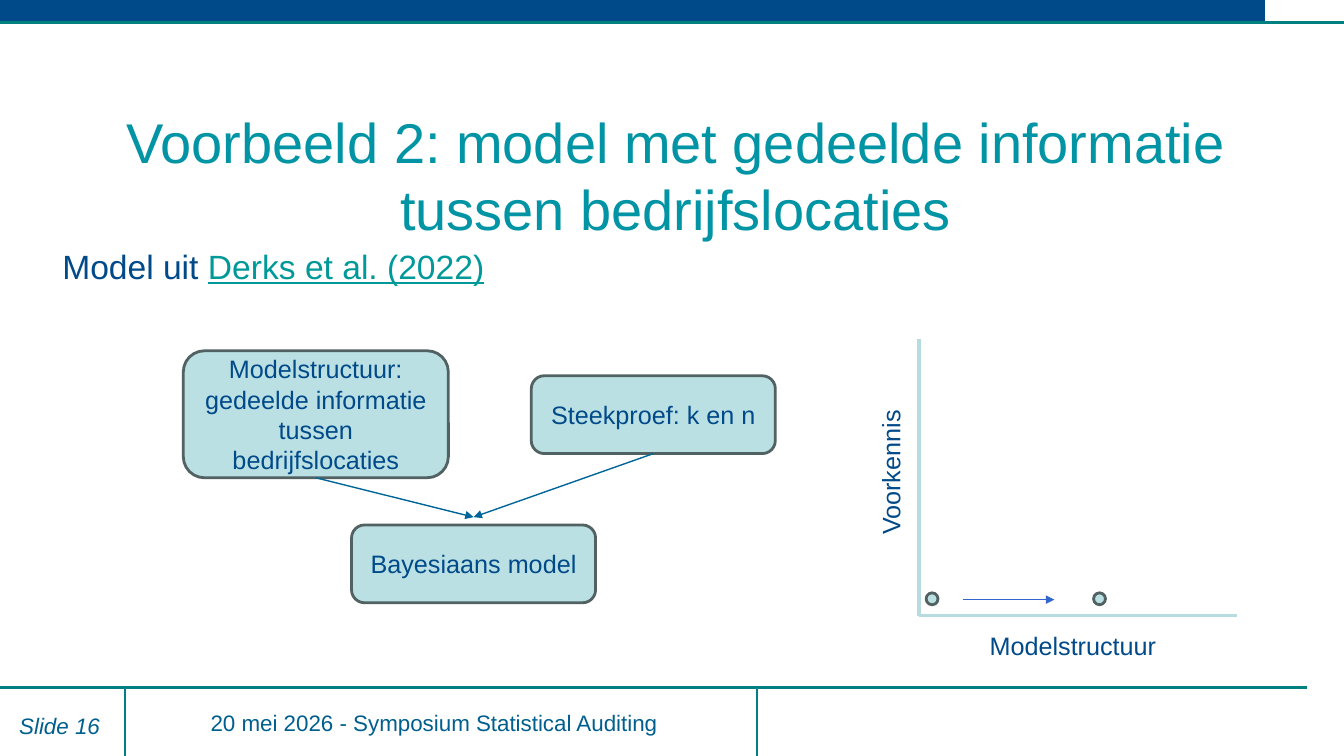
import pptx
import pptx.util
import pptx.dml.color
import pptx.enum.shapes
import pptx.enum.text
import pptx.oxml
import pptx.oxml.ns

Cm, Pt = pptx.util.Cm, pptx.util.Pt
SHAPE = pptx.enum.shapes.MSO_SHAPE
ALIGN = pptx.enum.text.PP_ALIGN
ANCHOR = pptx.enum.text.MSO_ANCHOR

COLOURS = {
    "navy": "004A8A", "title": "0094A4", "footer": "005F8E", "rule": "008080",
    "link": "009999", "node": "BBE0E3", "outline": "526263", "axis": "B6DCDF",
    "flow": "006699", "shift": "3366CC",
}

# All lengths in centimetres; areas are (left, top, width, height).
SLIDE_WIDTH, SLIDE_HEIGHT = 33.87, 19.05
FOOTER_TOP, HEADER_RULE = 17.32, 0.56
HEADER_BAR = (0, 0, 31.88, 0.58)
RULES = [
    ((0, FOOTER_TOP), (32.94, FOOTER_TOP)),
    ((3.15, FOOTER_TOP), (3.15, SLIDE_HEIGHT)),
    ((19.08, FOOTER_TOP), (19.08, SLIDE_HEIGHT)),
    ((0, HEADER_RULE), (SLIDE_WIDTH, HEADER_RULE)),
]

TEXTS = [
    ([("Voorbeeld 2: model met gedeelde informatie tussen bedrijfslocaties", "title")],
     (1.02, 3.12, 32, 2.57),
     dict(size=40, align=ALIGN.CENTER, anchor=ANCHOR.MIDDLE)),
    ([("Model uit ", "navy"), ("Derks et al. (2022)", "link")],
     (1.32, 6.07, 20.57, 1.2), dict(size=24)),
    ([("20 mei 2026 - Symposium Statistical Auditing", "footer")],
     (2.71, 17.75, 16.46, 0.91), dict(size=16, align=ALIGN.CENTER)),
    ([("Slide 16", "footer")],
     (0, 17.81, 2.77, 0.86), dict(size=16, align=ALIGN.RIGHT, italic=True)),
    ([("Voorkennis", "navy")],
     (20.6, 11.38, 3.68, 1.02), dict(wrap=False, rotation=270)),
    ([("Modelstructuur", "navy")],
     (24.69, 15.75, 4.75, 1.02), dict(wrap=False)),
]

SOURCES = [
    ("Steekproef: k en n", (13.39, 9.47, 6.15, 1.96)),
    ("Modelstructuur: gedeelde informatie tussen bedrijfslocaties",
     (4.62, 8.84, 6.68, 3.2)),
]
MODEL = ("Bayesiaans model", (8.86, 13.23, 6.15, 1.96))
ARROW_GAP = 0.2

ORIGIN, AXIS_TOP, AXIS_RIGHT = (23.16, 15.52), 8.53, 31.17
DOT_LEFTS, DOT_TOP, DOT_SIZE = (23.34, 27.56), 14.94, 0.3
SHIFT = ((24.26, 15.11), (26.57, 15.11))


def rgb(name):
    return pptx.dml.color.RGBColor.from_string(COLOURS[name])


def write(shape, runs, size=18, align=ALIGN.LEFT, anchor=ANCHOR.TOP,
          italic=False, wrap=True):
    """Fill a shape with one paragraph of (text, colour) runs; links are underlined."""
    frame = shape.text_frame
    frame.word_wrap = wrap
    frame.vertical_anchor = anchor
    para = frame.paragraphs[0]
    para.alignment = align
    for text, colour in runs:
        span = para.add_run()
        span.text = text
        span.font.name = "Arial"
        span.font.size = Pt(size)
        span.font.italic = italic
        span.font.color.rgb = rgb(colour)
        if colour == "link":
            span.font.underline = True


def add_text(slide, runs, area, rotation=0, **style):
    box = slide.shapes.add_textbox(*map(Cm, area))
    box.rotation = rotation
    write(box, runs, **style)


def add_filled(slide, kind, area, fill, outline=None):
    shape = slide.shapes.add_shape(kind, *map(Cm, area))
    shape.shadow.inherit = False
    shape.fill.solid()
    shape.fill.fore_color.rgb = rgb(fill)
    if outline:
        shape.line.color.rgb = rgb(outline)
        shape.line.width = Pt(2)
    else:
        shape.line.fill.background()
    return shape


def add_node(slide, text, area):
    node = add_filled(slide, SHAPE.ROUNDED_RECTANGLE, area, "node", "outline")
    write(node, [(text, "navy")], align=ALIGN.CENTER, anchor=ANCHOR.MIDDLE)
    return node


def add_line(slide, start, end, colour, width, arrow=False):
    line = slide.shapes.add_connector(
        pptx.enum.shapes.MSO_CONNECTOR.STRAIGHT, *map(Cm, start + end))
    line.line.color.rgb = rgb(colour)
    line.line.width = Pt(width)
    properties = line._element.spPr
    if arrow:
        head = pptx.oxml.parse_xml(
            f'<a:tailEnd {pptx.oxml.ns.nsdecls("a")} type="triangle"/>')
        properties.find(pptx.oxml.ns.qn("a:ln")).append(head)
    properties.append(pptx.oxml.parse_xml(
        f'<a:effectLst {pptx.oxml.ns.nsdecls("a")}/>'))
    return line


def add_model_diagram(slide):
    left, top, width, _ = MODEL[1]
    target = (left + width / 2, top - ARROW_GAP)
    add_node(slide, *MODEL)
    for text, area in SOURCES:
        node = add_node(slide, text, area)
        bottom = (area[0] + area[2] / 2, area[1] + area[3])
        arrow = add_line(slide, bottom, target, "flow", 1, arrow=True)
        arrow.begin_connect(node, 2)


def add_knowledge_plot(slide):
    add_line(slide, (ORIGIN[0], AXIS_TOP), ORIGIN, "axis", 2.25)
    add_line(slide, ORIGIN, (AXIS_RIGHT, ORIGIN[1]), "axis", 2.25)
    for left in DOT_LEFTS:
        add_filled(slide, SHAPE.OVAL, (left, DOT_TOP, DOT_SIZE, DOT_SIZE),
                   "node", "outline")
    add_line(slide, *SHIFT, "shift", 0.75, arrow=True)


def main():
    deck = pptx.Presentation()
    deck.slide_width, deck.slide_height = Cm(SLIDE_WIDTH), Cm(SLIDE_HEIGHT)
    page = deck.slides.add_slide(deck.slide_layouts[6])
    add_filled(page, SHAPE.RECTANGLE, HEADER_BAR, "navy")
    for start, end in RULES:
        add_line(page, start, end, "rule", 2)
    for runs, area, style in TEXTS:
        add_text(page, runs, area, **style)
    add_knowledge_plot(page)
    add_model_diagram(page)
    deck.save("out.pptx")


if __name__ == "__main__":
    main()
